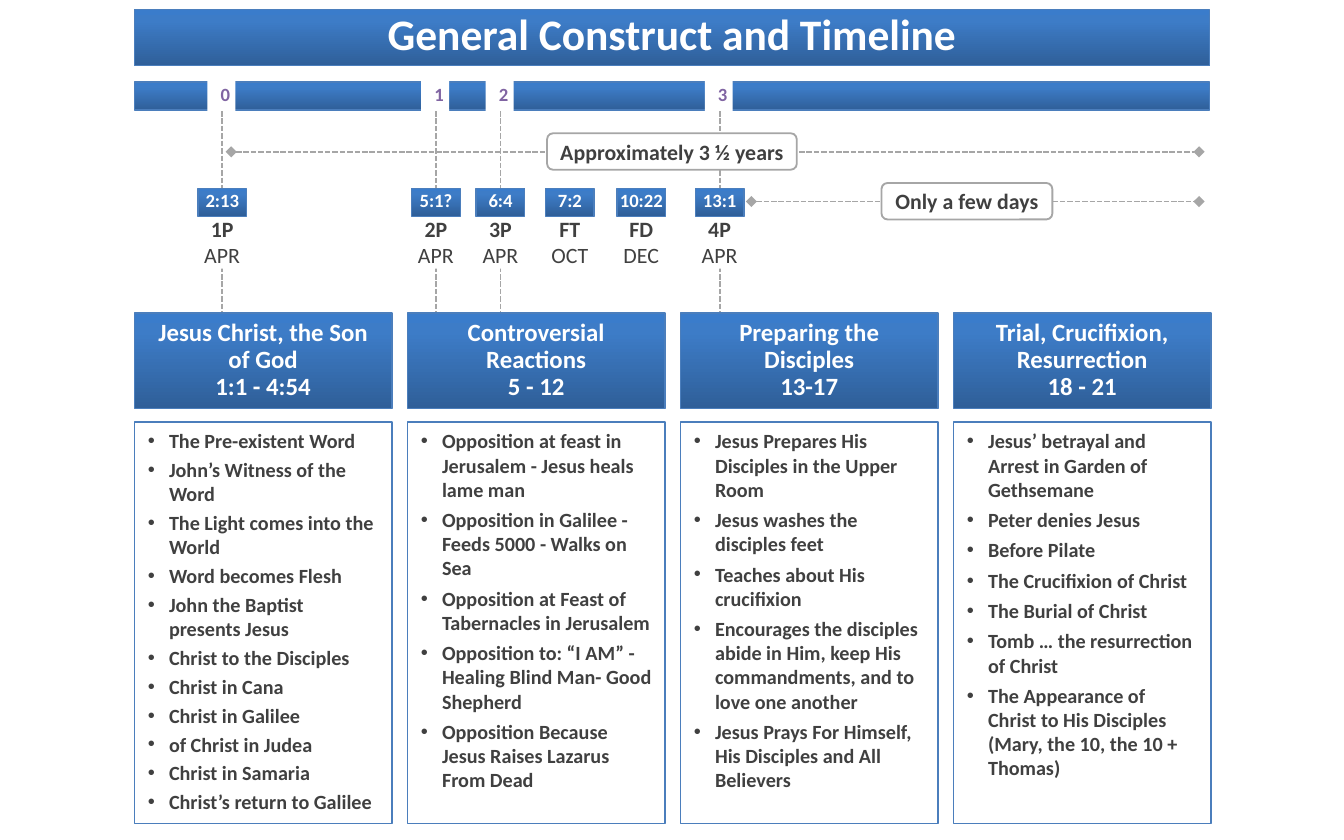
"""Build the timeline slide with its four themed columns."""
from copy import deepcopy

from lxml.etree import SubElement
from pptx import Presentation
from pptx.dml.color import RGBColor
from pptx.enum.dml import MSO_LINE
from pptx.enum.shapes import MSO_CONNECTOR, MSO_SHAPE
from pptx.enum.text import MSO_ANCHOR, MSO_AUTO_SIZE, PP_ALIGN
from pptx.oxml.ns import qn
from pptx.util import Cm, Pt

THEME = {
    "font": "Calibri",
    "white": "FFFFFF", "ink": "404040", "year": "8064A2",
    "edge": "4B7EBC", "guide": "A6A6A6",
    "gradient": [(0, "2F5F99"), (0.8, "3D7CC7"), (1, "3A7CCB")],
    "title": 23.3, "heading": 13.3, "label": 11.7, "item": 10.8, "small": 10,
}

TITLE = "General Construct and Timeline"
EVENTS = [
    (4.2, "2:13", "1P", "APR", "0"),
    (8.24, "5:1?", "2P", "APR", "1"),
    (9.46, "6:4", "3P", "APR", "2"),
    (10.77, "7:2", "FT", "OCT", None),
    (12.12, "10:22", "FD", "DEC", None),
    (13.6, "13:1", "4P", "APR", "3"),
]
SPANS = [
    ("Approximately 3 ½ years", 4.37, 2.87, 10.34, 4.72),
    ("Only a few days", 14.2, 3.81, 16.66, 3.23),
]
COLUMNS = [
    ("Jesus Christ, the Son of God", "1:1 - 4:54", 2.5, [
        "The Pre-existent Word", "John’s Witness of the Word",
        "The Light comes into the World", "Word becomes Flesh",
        "John the Baptist presents Jesus", "Christ to the Disciples",
        "Christ in Cana", "Christ in Galilee", "of Christ in Judea",
        "Christ in Samaria", "Christ’s return to Galilee"]),
    ("Controversial Reactions", "5 - 12", 3.3, [
        "Opposition at feast in Jerusalem - Jesus heals lame man",
        "Opposition in Galilee - Feeds 5000 - Walks on Sea",
        "Opposition at Feast of Tabernacles in Jerusalem",
        "Opposition to: “I AM” - Healing Blind Man- Good Shepherd",
        "Opposition Because Jesus Raises Lazarus From Dead"]),
    ("Preparing the Disciples", "13-17", 3.3, [
        "Jesus Prepares His Disciples in the Upper Room",
        "Jesus washes the disciples feet",
        "Teaches about His crucifixion",
        "Encourages the disciples abide in Him, keep His commandments, "
        "and to love one another",
        "Jesus Prays For Himself, His Disciples and All Believers"]),
    ("Trial, Crucifixion, Resurrection", "18 - 21", 3.3, [
        "Jesus’ betrayal and Arrest in Garden of Gethsemane",
        "Peter denies Jesus", "Before Pilate", "The Crucifixion of Christ",
        "The Burial of Christ", "Tomb … the resurrection of Christ",
        "The Appearance of Christ to His Disciples "
        "(Mary, the 10, the 10 + Thomas)"]),
]

LEFT, BAND_WIDTH = 2.54, 20.32
COLUMN_WIDTH, COLUMN_STEP = 4.87, 5.16
TAG_WIDTH = 0.92


def color(name):
    return RGBColor.from_string(THEME[name])


def place(shape, left, top, width, height):
    shape.left, shape.top = Cm(left), Cm(top)
    shape.width, shape.height = Cm(width), Cm(height)


def paint(shape, fill="white", edge=None, weight=0.75):
    if fill == "gradient":
        shape.fill.gradient()
        shape.fill.gradient_angle = 90
        last = shape._element.spPr.findall(".//" + qn("a:gs"))[-1]
        last.addnext(deepcopy(last))
        for stop, (position, value) in zip(shape.fill.gradient_stops,
                                           THEME["gradient"]):
            stop.position = position
            stop.color.rgb = RGBColor.from_string(value)
    else:
        shape.fill.solid()
        shape.fill.fore_color.rgb = color(fill)
    if edge:
        shape.line.color.rgb = color(edge)
        shape.line.width = Pt(weight)
    else:
        shape.line.fill.background()


def add_box(slide, bounds, kind=MSO_SHAPE.RECTANGLE, **style):
    shape = slide.shapes.add_shape(kind, *map(Cm, bounds))
    shape.shadow.inherit = False
    paint(shape, **style)
    return shape


def write(shape, lines, size, ink="white", spacing=1.0, insets=None, wrap=True,
          anchor=MSO_ANCHOR.MIDDLE, align=PP_ALIGN.CENTER, after=0,
          bullets=False, plain=()):
    frame = shape.text_frame
    frame.word_wrap = wrap
    frame.auto_size = MSO_AUTO_SIZE.NONE
    frame.vertical_anchor = anchor
    if insets:
        frame.margin_left = frame.margin_right = Cm(insets[0])
        frame.margin_top = frame.margin_bottom = Cm(insets[1])
    for index, line in enumerate(lines):
        paragraph = frame.add_paragraph() if index else frame.paragraphs[0]
        if bullets:
            properties = paragraph._p.get_or_add_pPr()
            properties.set("marL", str(Cm(0.4)))
            properties.set("indent", str(-Cm(0.4)))
            SubElement(properties, qn("a:buFont")).set("typeface", "Arial")
            SubElement(properties, qn("a:buChar")).set("char", "•")
        paragraph.alignment = align
        paragraph.line_spacing = spacing
        paragraph.space_before, paragraph.space_after = Pt(0), Pt(after)
        run = paragraph.add_run()
        run.text = line
        run.font.name = THEME["font"]
        run.font.size = Pt(THEME[size])
        run.font.bold = index not in plain
        run.font.color.rgb = color(ink)


def add_guide(slide, start, end, diamonds=False):
    connector = slide.shapes.add_connector(
        MSO_CONNECTOR.STRAIGHT, *map(Cm, (*start, *end)))
    connector.line.color.rgb = color("guide")
    connector.line.width = Pt(1)
    connector.line.dash_style = MSO_LINE.SQUARE_DOT
    if diamonds:
        for tag in ("a:headEnd", "a:tailEnd"):
            SubElement(connector.line._get_or_add_ln(), qn(tag)).set("type", "diamond")
    SubElement(connector._element.spPr, qn("a:effectLst"))


def add_columns(slide):
    bodies = list(slide.placeholders)[1:]
    for index, (heading, verses, after, items) in enumerate(COLUMNS):
        left = LEFT + index * COLUMN_STEP
        header = add_box(slide, (left, 5.92, COLUMN_WIDTH, 1.8),
                         fill="gradient", edge="edge")
        write(header, [heading, verses], "heading", spacing=0.9)
        body = bodies[index]
        place(body, left, 7.98, COLUMN_WIDTH, 7.59)
        paint(body, edge="edge")
        write(body, items, "item", "ink", anchor=MSO_ANCHOR.TOP,
              align=PP_ALIGN.LEFT, after=after, bullets=True)


def add_events(slide):
    for center, verse, feast, month, year in EVENTS:
        left = center - TAG_WIDTH / 2
        label = add_box(slide, (left, 4.08, TAG_WIDTH, 1))
        write(label, [feast, month], "label", "ink", insets=(0, 0),
              wrap=False, anchor=MSO_ANCHOR.TOP, plain=(1,))
        if year:
            marker = add_box(slide, (center - 0.28, 1.52, 0.53, 0.58))
            write(marker, [year], "small", "year", spacing=0.8)
        tag = add_box(slide, (left, 3.56, TAG_WIDTH, 0.53),
                      fill="gradient", edge="edge")
        write(tag, [verse], "small", spacing=0.8, insets=(0.03, 0))


def add_spans(slide):
    for text, start, height, left, width in SPANS:
        add_guide(slide, (start, height), (22.66, height), diamonds=True)
        pill = add_box(slide, (left, height - 0.35, width, 0.69),
                       MSO_SHAPE.ROUNDED_RECTANGLE, edge="guide", weight=1)
        write(pill, [text], "label", "ink", insets=(0.1, 0.08), wrap=False)


def main():
    presentation = Presentation()
    presentation.slide_width, presentation.slide_height = Cm(25.4), Cm(15.88)
    slide = presentation.slides.add_slide(
        presentation.slide_layouts.get_by_name("Comparison"))
    title = slide.shapes.title
    place(title, LEFT, 0.18, BAND_WIDTH, 1.06)
    paint(title, fill="gradient", edge="edge")
    write(title, [TITLE], "title", spacing=0.8)
    for center, *_, year in EVENTS:
        if year:
            add_guide(slide, (center, 2.1), (center, 6.76))
    add_columns(slide)
    add_box(slide, (LEFT, 1.55, BAND_WIDTH, 0.53), fill="gradient", edge="edge")
    add_events(slide)
    add_spans(slide)
    presentation.save("out.pptx")


if __name__ == "__main__":
    main()
